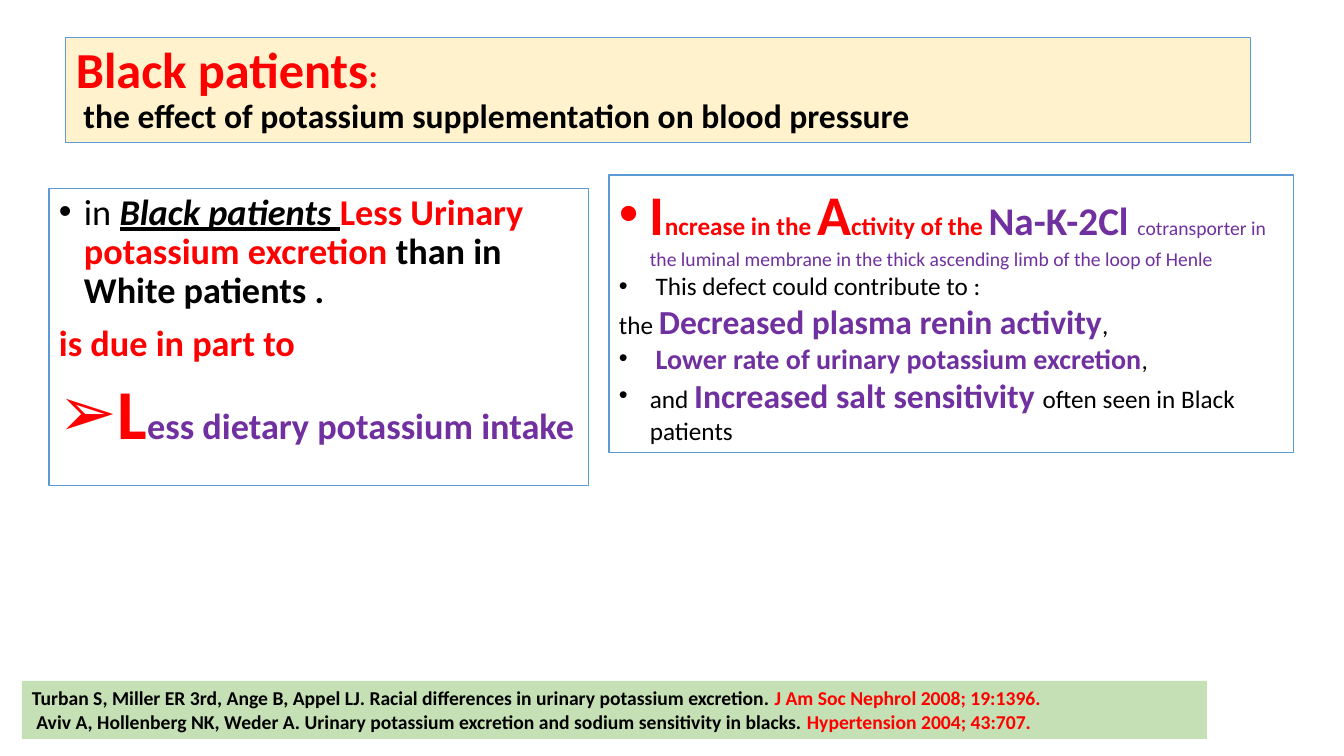
from lxml import etree
from pptx import Presentation
from pptx.dml.color import RGBColor
from pptx.enum.shapes import MSO_SHAPE
from pptx.enum.text import MSO_ANCHOR, PP_ALIGN
from pptx.oxml.ns import qn
from pptx.util import Emu, Pt

EMU_PER_PX = 914400 / 100.8
FONT = "Calibri"
BULLET_FONT = "Arial"
RECTANGLE = MSO_SHAPE.RECTANGLE
TOP, MIDDLE = MSO_ANCHOR.TOP, MSO_ANCHOR.MIDDLE
LEFT = PP_ALIGN.LEFT

BLACK = RGBColor(0x00, 0x00, 0x00)
RED = RGBColor(0xFF, 0x00, 0x00)
PURPLE = RGBColor(0x70, 0x30, 0xA0)
BLUE = RGBColor(0x5B, 0x9B, 0xD5)
CREAM = RGBColor(0xFF, 0xF2, 0xCC)
GREEN = RGBColor(0xC5, 0xE0, 0xB4)


def px(length):
    return Emu(round(length * EMU_PER_PX))


def add_panel(slide, left, top, width, height, fill=None, line=None, anchor=TOP):
    """Add a rectangle and return its empty text frame."""
    panel = slide.shapes.add_shape(RECTANGLE, px(left), px(top), px(width), px(height))
    panel.shadow.inherit = False
    if fill is None:
        panel.fill.background()
    else:
        panel.fill.solid()
        panel.fill.fore_color.rgb = fill
    if line is None:
        panel.line.fill.background()
    else:
        panel.line.color.rgb = line
        panel.line.width = Pt(0.75)
    frame = panel.text_frame
    frame.word_wrap = True
    frame.vertical_anchor = anchor
    return frame


def set_bullet(paragraph, bullet, indent):
    properties = paragraph._p.get_or_add_pPr()
    properties.set("marL", str(px(indent)))
    properties.set("indent", str(-px(indent)))
    etree.SubElement(properties, qn("a:buFont")).set("typeface", BULLET_FONT)
    etree.SubElement(properties, qn("a:buChar")).set("char", bullet)


def add_run(paragraph, text, size, color=BLACK, bold=True, emphasis=False):
    """Add a run; emphasis means italic and underlined."""
    run = paragraph.add_run()
    run.text = text
    font = run.font
    font.name = FONT
    font.size = Pt(size)
    font.color.rgb = color
    font.bold = bold
    font.italic = font.underline = emphasis


def fill_paragraphs(frame, paragraphs, indent=0, line_spacing=1.0, space_before=0):
    """Write (bullet, runs) pairs into the frame."""
    for index, (bullet, runs) in enumerate(paragraphs):
        paragraph = frame.add_paragraph() if index else frame.paragraphs[0]
        paragraph.alignment = LEFT
        paragraph.line_spacing = line_spacing
        paragraph.space_before = Pt(space_before)
        if bullet:
            set_bullet(paragraph, bullet, indent)
        for run in runs:
            add_run(paragraph, *run)


def add_title(slide):
    title = add_panel(slide, 66, 38, 1185, 105, CREAM, BLUE, MIDDLE)
    fill_paragraphs(title, [
        (None, [("Black patients", 36, RED), (":", 24, RED)]),
        (None, [(" the effect of potassium supplementation on blood pressure", 24)]),
    ], line_spacing=0.9)


def add_excretion(slide):
    excretion = add_panel(slide, 49, 189, 540, 297, line=BLUE)
    body = 25.9
    fill_paragraphs(excretion, [
        ("•", [("in ", body, BLACK, False),
               ("Black patients ", body, BLACK, True, True),
               ("Less Urinary potassium excretion ", body, RED),
               ("than in White patients .", body)]),
        (None, [("is due in part to", body, RED)]),
        ("➢", [("L", 50, RED), ("ess dietary potassium intake", body, PURPLE)]),
    ], indent=25, line_spacing=0.9, space_before=10)


def add_cotransporter(slide):
    cotransporter = add_panel(slide, 609, 175, 685, 278, line=BLUE)
    fill_paragraphs(cotransporter, [
        ("•", [("I", 40, RED), ("ncrease in the ", 18, RED),
               ("A", 40, RED), ("ctivity of the ", 18, RED),
               ("Na-K-2Cl ", 28, PURPLE),
               ("cotransporter in the luminal membrane in the thick ascending "
                "limb of the loop of Henle", 14, PURPLE, False)]),
        ("•", [(" This defect could contribute to :", 18, BLACK, False)]),
        (None, [("the ", 18, BLACK, False),
                ("Decreased plasma renin activity", 24, PURPLE),
                (",", 18, BLACK, False)]),
        ("•", [(" ", 18),
               ("Lower rate of urinary potassium excretion", 20, PURPLE),
               (",", 18, BLACK, False)]),
        ("•", [("and ", 18, BLACK, False),
               ("Increased salt sensitivity ", 24, PURPLE),
               ("often seen in Black patients", 18, BLACK, False)]),
    ], indent=31)


def add_references(slide):
    references = add_panel(slide, 22, 681, 1185, 58, GREEN)
    citations = [
        ("Turban S, Miller ER 3rd, Ange B, Appel LJ. Racial differences in "
         "urinary potassium excretion. ", "J Am Soc Nephrol 2008; 19:1396."),
        (" Aviv A, Hollenberg NK, Weder A. Urinary potassium excretion and "
         "sodium sensitivity in blacks. ", "Hypertension 2004; 43:707."),
    ]
    fill_paragraphs(references, [
        (None, [(article, 14), (journal, 14, RED)]) for article, journal in citations
    ])


def main():
    presentation = Presentation()
    presentation.slide_width = px(1344)
    presentation.slide_height = px(756)
    slide = presentation.slides.add_slide(presentation.slide_layouts[6])
    add_title(slide)
    add_excretion(slide)
    add_references(slide)
    add_cotransporter(slide)
    presentation.save("out.pptx")


if __name__ == "__main__":
    main()
